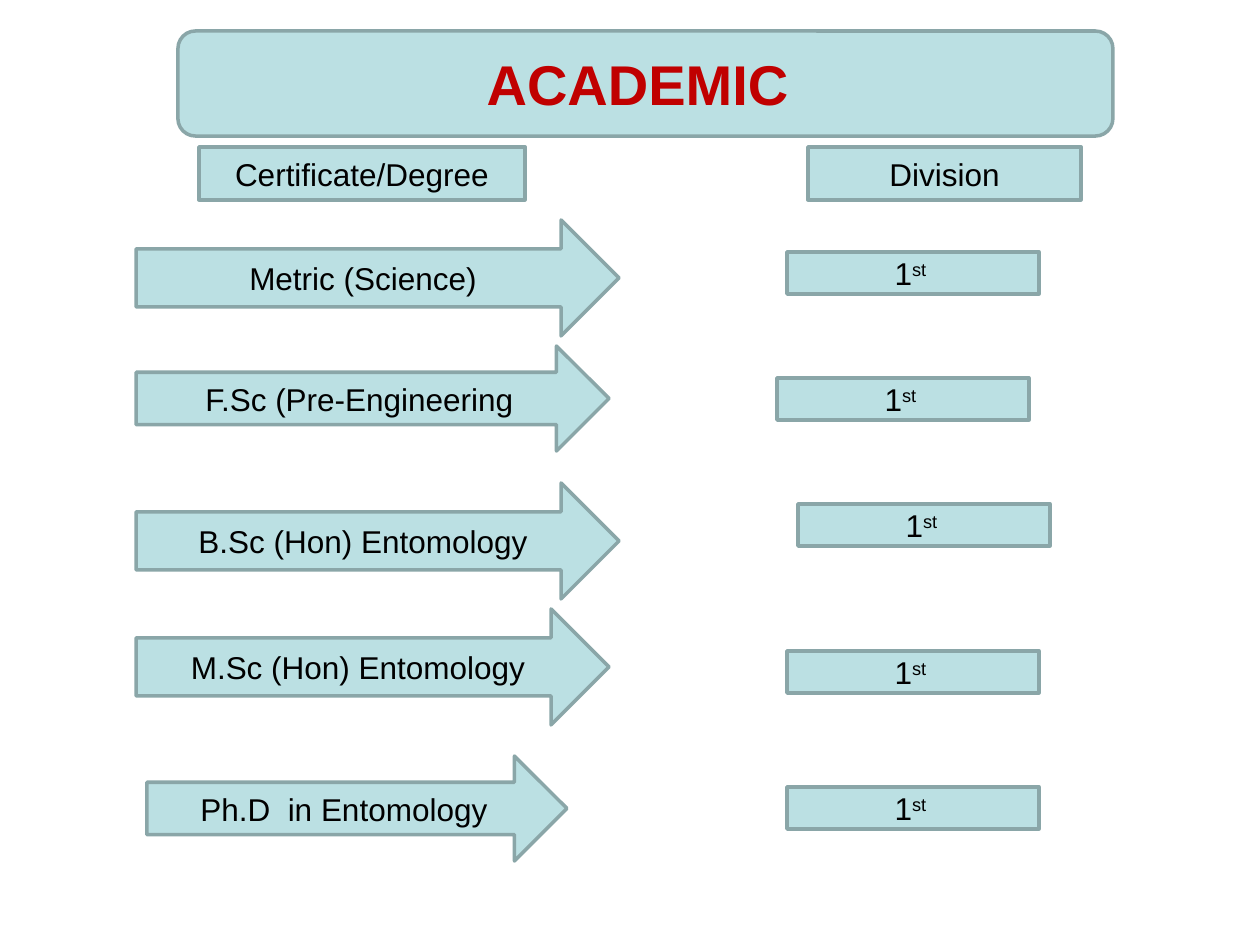
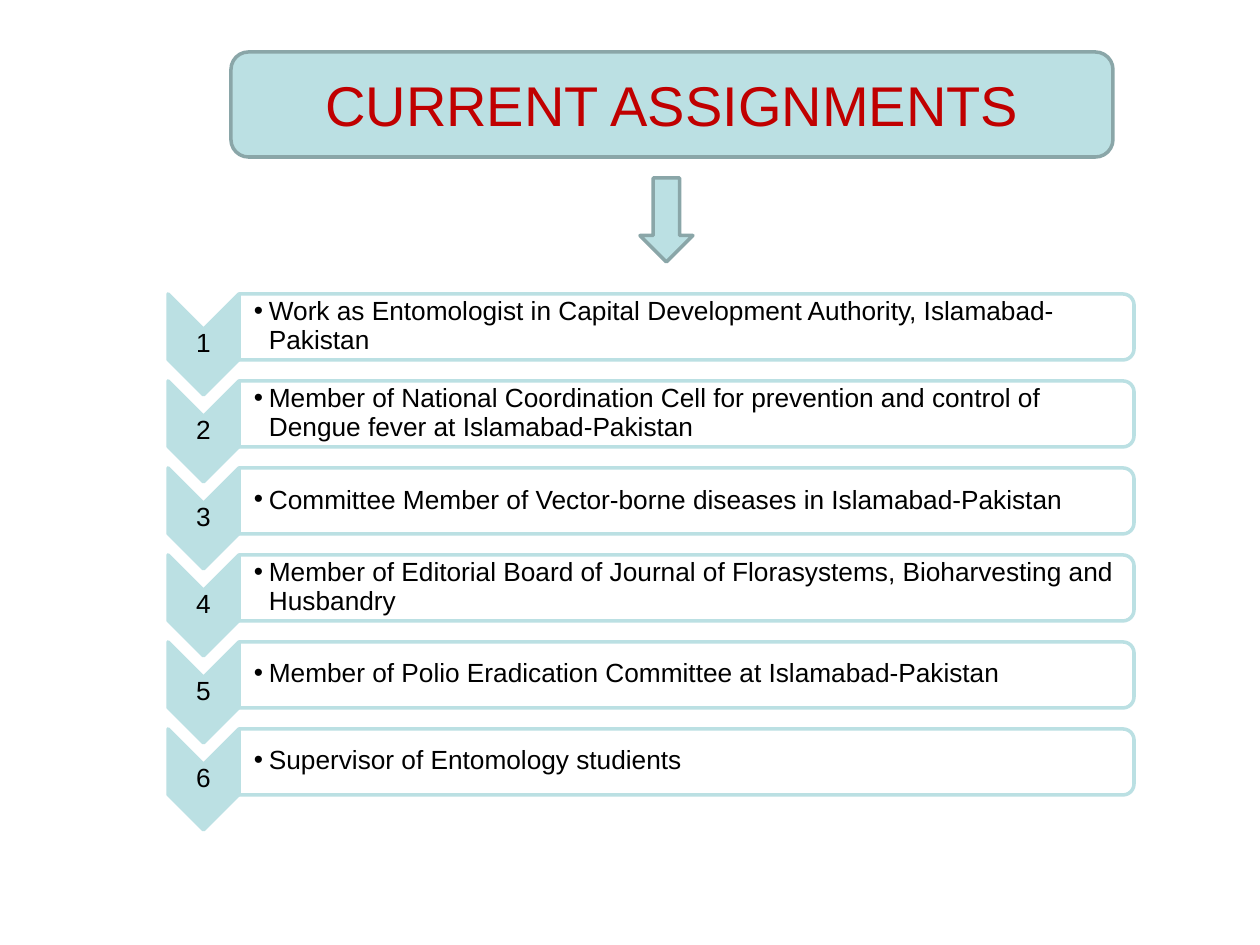
from dataclasses import dataclass

from lxml.etree import SubElement
from pptx import Presentation
from pptx.dml.color import RGBColor as Rgb
from pptx.enum.shapes import MSO_SHAPE as Kind
from pptx.enum.text import MSO_ANCHOR as Anchor, PP_ALIGN as Align
from pptx.oxml import parse_xml
from pptx.oxml.ns import nsdecls, qn
from pptx.util import Pt

SCALE = 914400 / 126


@dataclass(frozen=True)
class Theme:
    face: str = "Arial"
    pale: Rgb = Rgb(0xBB, 0xE0, 0xE3)
    edge: Rgb = Rgb(0x8A, 0xA6, 0xA8)
    red: Rgb = Rgb(0xC0, 0, 0)
    ink: Rgb = Rgb(0, 0, 0)
    white: Rgb = Rgb(255, 255, 255)
    head: int = 32
    label: int = 18
    item: int = 15
    line: int = 2


THEME = Theme()

DEGREES = [
    ("Metric (Science)", (136, 220, 483, 116), (787, 252)),
    ("F.Sc (Pre-Engineering", (136, 346, 473, 105), (777, 378)),
    ("B.Sc (Hon) Entomology", (136, 483, 483, 116), (798, 504)),
    ("M.Sc (Hon) Entomology", (136, 609, 473, 116), (787, 651)),
    ("Ph.D  in Entomology", (147, 756, 420, 105), (787, 787)),
]

TASKS = [
    "Work as Entomologist in Capital Development Authority, Islamabad-Pakistan",
    "Member of National Coordination Cell for prevention and control of "
    "Dengue fever at Islamabad-Pakistan",
    "Committee Member of Vector-borne diseases in Islamabad-Pakistan",
    "Member of Editorial Board of Journal of Florasystems, Bioharvesting and Husbandry",
    "Member of Polio Eradication Committee at Islamabad-Pakistan",
    "Supervisor of Entomology studients",
]


def px(count):
    return round(count * SCALE)


def place(shape, box):
    shape.left, shape.top, shape.width, shape.height = map(px, box)


def style(para, size, color=THEME.ink, bold=False, align=Align.CENTER):
    para.alignment = align
    font = para.font
    font.name = THEME.face
    font.size = Pt(size)
    font.bold = bold
    font.color.rgb = color


def write(shape, text, size, **look):
    frame = shape.text_frame
    frame.word_wrap = True
    frame.vertical_anchor = Anchor.MIDDLE
    para = frame.paragraphs[0]
    para.text = text
    style(para, size, **look)
    return para


def add_form(slide, kind, box, fill=THEME.pale, edge=THEME.edge):
    shape = slide.shapes.add_shape(kind, *map(px, box))
    shape.shadow.inherit = False
    shape.fill.solid()
    shape.fill.fore_color.rgb = fill
    shape.line.color.rgb = edge
    shape.line.width = Pt(THEME.line)
    return shape


def add_title(deck, text, box, bold=False):
    slide = deck.slides.add_slide(deck.slide_layouts[5])
    title = slide.shapes.title
    place(title, box)
    write(title, text, THEME.head, color=THEME.red, bold=bold)
    panel = add_form(slide, Kind.ROUNDED_RECTANGLE, box)
    panel.element.addnext(title.element)
    return slide


def add_label(slide, kind, box, text):
    return write(add_form(slide, kind, box), text, THEME.label)


def add_rank(slide, spot):
    para = add_label(slide, Kind.RECTANGLE, (*spot, 252, 42), "1")
    run = para.add_run()
    run.text = "st "
    run._r.get_or_add_rPr().set("baseline", "30000")


def add_turned(slide, kind, box, fill):
    left, top, width, height = box
    shift = (width - height) / 2
    shape = add_form(slide, kind, (left + shift, top - shift, height, width),
                     fill, THEME.pale)
    shape.rotation = 90
    return shape


def add_note(slide, box, text, inset=1, align=Align.CENTER):
    note = slide.shapes.add_textbox(*map(px, box))
    frame = note.text_frame
    frame.margin_left = px(inset)
    frame.margin_right = frame.margin_top = frame.margin_bottom = px(1)
    para = write(note, text, THEME.item, align=align)
    para.line_spacing = 0.9
    return para


def add_bullet(para):
    props = para._p.get_or_add_pPr()
    props.set("marL", str(px(15)))
    props.set("indent", str(-px(15)))
    last = props.find(qn("a:defRPr"))
    for tag in (f'buFont {nsdecls("a")} typeface="{THEME.face}"',
                f'buChar {nsdecls("a")} char="•"'):
        last.addprevious(parse_xml(f"<a:{tag}/>"))


def add_task(slide, rank, top, text):
    add_turned(slide, Kind.CHEVRON, (168, top, 71, 101), THEME.pale)
    add_note(slide, (168, top + 35, 71, 30), str(rank))
    bar = add_turned(slide, Kind.ROUND_2_SAME_RECTANGLE, (239, top, 895, 66), THEME.white)
    tint = bar.element.spPr.find(qn("a:solidFill"))[0]
    SubElement(tint, qn("a:alpha"), val="90000")
    add_bullet(add_note(slide, (239, top + 3, 892, 59), text, 15, Align.LEFT))


def draw_degrees(deck):
    slide = add_title(deck, "ACADEMIC ", (178, 31, 935, 105), bold=True)
    add_label(slide, Kind.RECTANGLE, (199, 147, 326, 53), "Certificate/Degree")
    add_label(slide, Kind.RECTANGLE, (808, 147, 273, 53), "Division")
    for name, box, spot in DEGREES:
        add_label(slide, Kind.RIGHT_ARROW, box, name)
        add_rank(slide, spot)


def draw_tasks(deck):
    slide = add_title(deck, "CURRENT ASSIGNMENTS", (231, 52, 882, 105))
    add_form(slide, Kind.DOWN_ARROW, (640, 178, 53, 84))
    for index, text in enumerate(TASKS):
        add_task(slide, index + 1, 294 + 87 * index, text)


def main():
    deck = Presentation()
    deck.slide_width, deck.slide_height = px(1260), px(945)
    draw_degrees(deck)
    draw_tasks(deck)
    deck.save("out.pptx")


if __name__ == "__main__":
    main()
